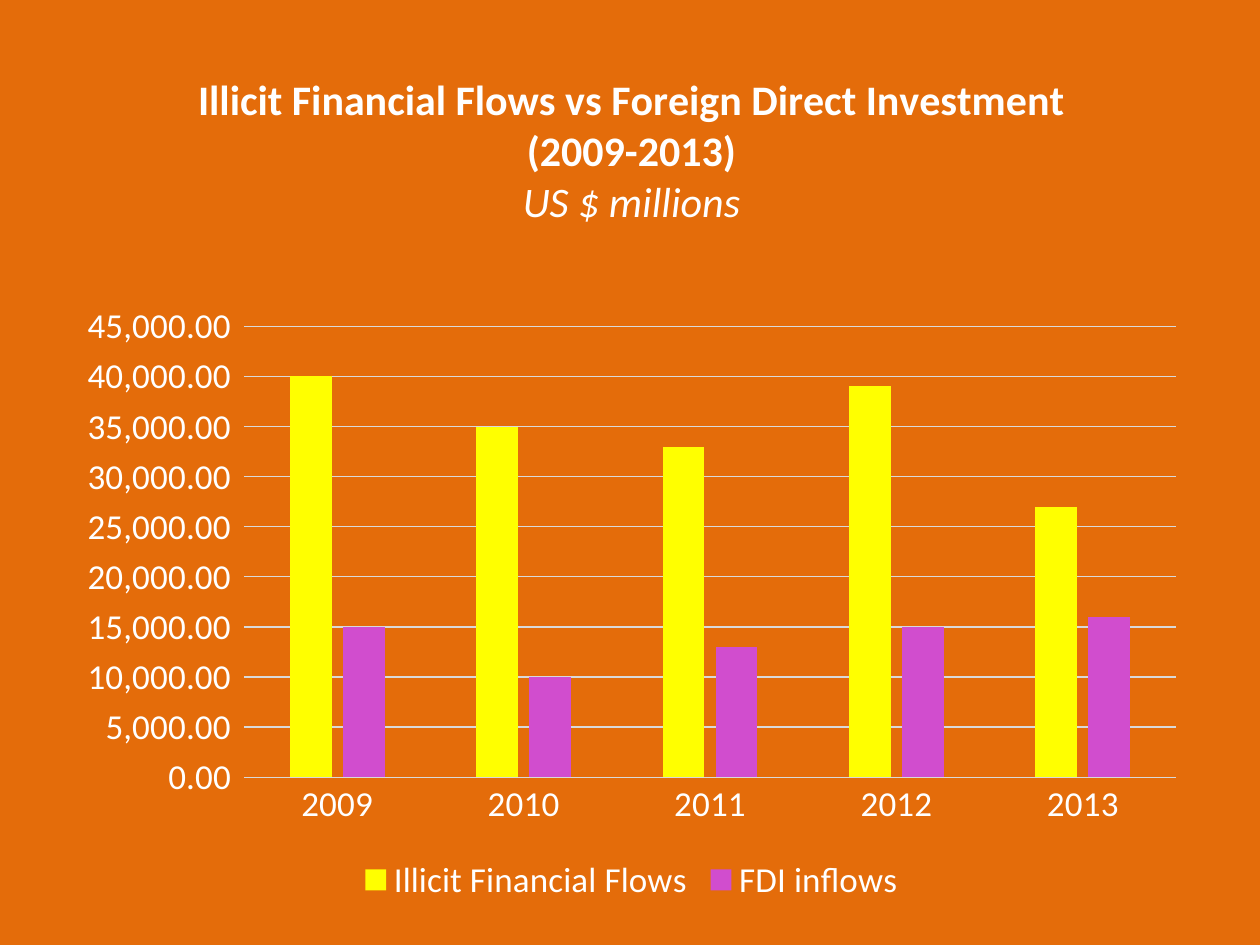
from lxml import etree
from pptx import Presentation
from pptx import util as u
from pptx.chart import data as chart_data
from pptx.dml.color import RGBColor
from pptx.enum import chart as kinds
from pptx.oxml import ns

ORANGE = RGBColor(0xE4, 0x6C, 0x0A)
WHITE = RGBColor(0xFF, 0xFF, 0xFF)
GREY = RGBColor(0xD9, 0xD9, 0xD9)
YELLOW = RGBColor(0xFF, 0xFF, 0x00)
PURPLE = RGBColor(0xD1, 0x4D, 0xCE)

YEARS = ["2009", "2010", "2011", "2012", "2013"]
FLOWS = [
    ("Illicit Financial Flows", YELLOW, [40000, 35000, 33000, 39000, 27000]),
    ("FDI inflows", PURPLE, [15000, 10000, 13000, 15000, 16000]),
]
TITLE = [
    ("Illicit Financial Flows vs Foreign Direct Investment (2009-2013)",
     {"bold": True, "italic": False}),
    ("US $ millions", {"bold": False, "italic": True}),
]
CHART_WIDTH, CHART_HEIGHT = u.Cm(22.86), u.Cm(17.4)
PLOT_AREA = {
    "x": u.Cm(3.62) / CHART_WIDTH,
    "y": u.Cm(5.66) / CHART_HEIGHT,
    "w": u.Cm(18.79) / CHART_WIDTH,
    "h": u.Cm(9.09) / CHART_HEIGHT,
}


def apply(target, values):
    for name, value in values.items():
        setattr(target, name, value)


def style_font(font, size, **values):
    apply(font, {"name": "Calibri", "size": u.Pt(size), **values})
    font.color.rgb = WHITE


def style_line(line):
    line.color.rgb = GREY
    line.width = u.Pt(0.75)


def add_flow_chart(page):
    data = chart_data.CategoryChartData()
    data.categories = YEARS
    for name, _, values in FLOWS:
        data.add_series(name, values)
    frame = page.shapes.add_chart(
        kinds.XL_CHART_TYPE.COLUMN_CLUSTERED,
        u.Cm(1.3), u.Cm(0.92), CHART_WIDTH, CHART_HEIGHT, data)
    return frame.chart


def write_title(chart):
    frame = chart.chart_title.text_frame
    for index, (words, values) in enumerate(TITLE):
        para = frame.add_paragraph() if index else frame.paragraphs[0]
        span = para.add_run()
        span.text = words
        style_font(span.font, 24, **values)
    chart.chart_title.include_in_layout = False


def style_columns(plot):
    apply(plot, {"gap_width": 219, "overlap": -27, "vary_by_categories": False})
    for series, (_, color, _) in zip(plot.series, FLOWS):
        series.invert_if_negative = False
        series.format.fill.solid()
        series.format.fill.fore_color.rgb = color


def style_axes(chart):
    for axis in (chart.category_axis, chart.value_axis):
        apply(axis, {"major_tick_mark": kinds.XL_TICK_MARK.NONE,
                     "minor_tick_mark": kinds.XL_TICK_MARK.NONE})
        style_font(axis.tick_labels.font, 20)
    style_line(chart.category_axis.format.line)
    values = chart.value_axis
    apply(values, {"minimum_scale": 0, "maximum_scale": 45000, "major_unit": 5000})
    values.format.line.fill.background()
    style_line(values.major_gridlines.format.line)
    apply(values.tick_labels, {"number_format": r"#,##0.00_ ;\-#,##0.00\ ",
                               "number_format_is_linked": False})


def style_legend(chart):
    chart.has_legend = True
    apply(chart.legend, {"position": kinds.XL_LEGEND_POSITION.BOTTOM,
                         "include_in_layout": False})
    style_font(chart.legend.font, 20)


def place_plot(chart):
    area = chart.plots[0]._element.getparent()
    for old in area.findall(ns.qn("c:layout")):
        area.remove(old)
    layout = etree.Element(ns.qn("c:layout"))
    manual = etree.SubElement(layout, ns.qn("c:manualLayout"))
    settings = {"layoutTarget": "inner", "xMode": "edge", "yMode": "edge", **PLOT_AREA}
    for name, value in settings.items():
        etree.SubElement(manual, ns.qn(f"c:{name}"), val=str(value))
    area.insert(0, layout)


def main():
    deck = Presentation()
    apply(deck, {"slide_width": u.Cm(25.4), "slide_height": u.Cm(19.05)})
    page = deck.slides.add_slide(deck.slide_layouts[6])
    page.background.fill.solid()
    page.background.fill.fore_color.rgb = ORANGE
    chart = add_flow_chart(page)
    style_font(chart.font, 20)
    write_title(chart)
    style_columns(chart.plots[0])
    style_axes(chart)
    style_legend(chart)
    place_plot(chart)
    deck.save("out.pptx")


if __name__ == "__main__":
    main()
